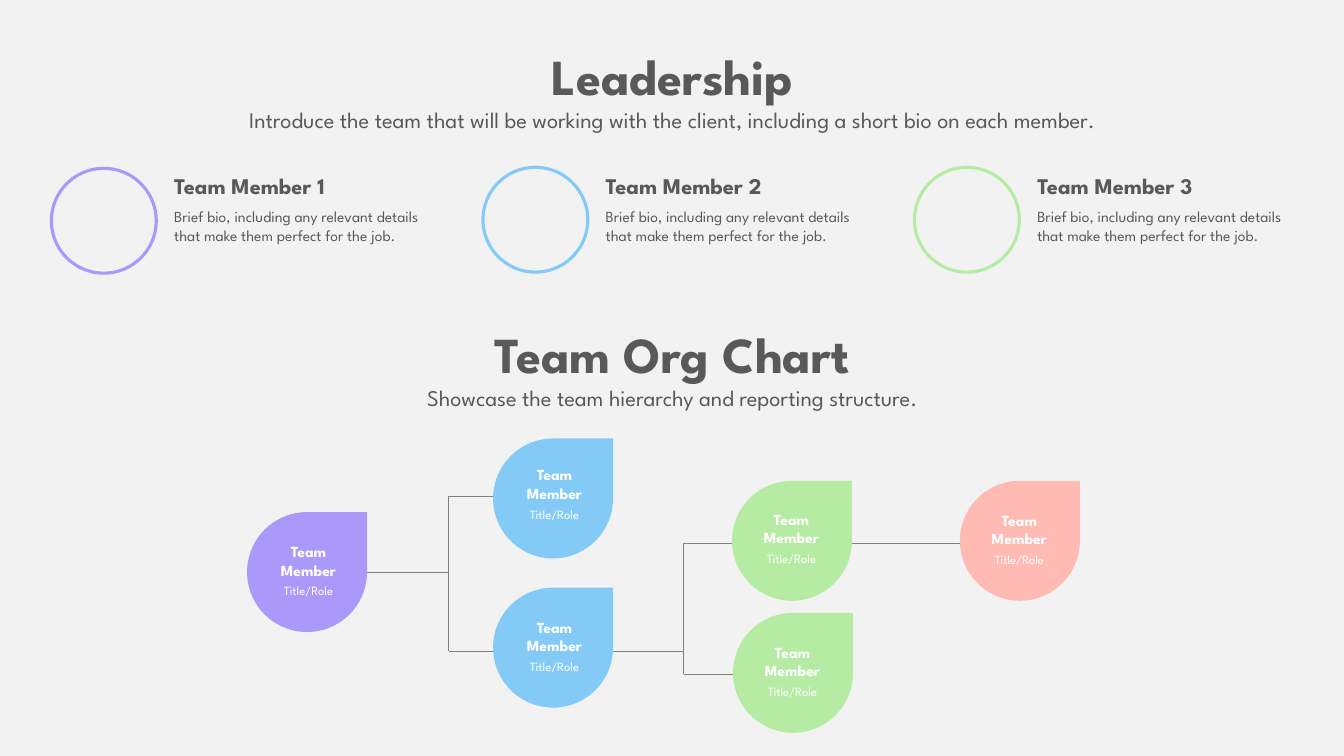
"""Build a slide with three leadership bios and a team org chart."""
import pptx
import pptx.util
import pptx.dml.color
import pptx.enum.shapes
import pptx.enum.text
import lxml.etree
from pptx.util import Inches

COLORS = {
    "background": "F2F2F2",
    "text": "595959",
    "line": "808080",
    "white": "FFFFFF",
    "purple": "AA99F9",
    "blue": "84CAF7",
    "green": "B5EBA2",
    "pink": "FEBAB3",
}
FONT = "League Spartan"
BIO = "Brief bio, including any relevant details that make them perfect for the job."
SHAPE = pptx.enum.shapes.MSO_SHAPE
ALIGN = pptx.enum.text.PP_ALIGN


def rgb(name):
    return pptx.dml.color.RGBColor.from_string(COLORS[name])


def add_text(s, box, heading, body, sizes, color="text", align=ALIGN.CENTER, gap=0):
    sp = s.shapes.add_textbox(*map(Inches, box))
    tf = sp.text_frame
    tf.word_wrap = True
    tf.auto_size = pptx.enum.text.MSO_AUTO_SIZE.SHAPE_TO_FIT_TEXT
    tf.text = f"{heading}\n{body}"
    tf.paragraphs[1].space_before = pptx.util.Pt(gap)
    for p, size, bold in zip(tf.paragraphs, sizes, (True, False)):
        p.alignment = align
        for r in p.runs:
            r.font.name = FONT
            r.font.size = pptx.util.Pt(size)
            r.font.bold = bold
            r.font.color.rgb = rgb(color)


def add_line(s, x1, y1, x2, y2):
    line = s.shapes.add_connector(
        pptx.enum.shapes.MSO_CONNECTOR.STRAIGHT, *map(Inches, (x1, y1, x2, y2)))
    line.line.color.rgb = rgb("line")
    line.line.width = pptx.util.Pt(0.5)
    spPr = line._element.spPr
    lxml.etree.SubElement(spPr, pptx.oxml.ns.qn("a:effectLst"))


def add_bracket(s, start, x, top, bottom, end):
    """Draw a feed line that splits into an upper and a lower branch."""
    feed_x, feed_y = start
    add_line(s, feed_x, feed_y, x - 0.01, feed_y)
    add_line(s, x, bottom, x, top)
    for y in (top, bottom):
        add_line(s, x, y, end, y)


def add_ring(s, left, top, color):
    sp = s.shapes.add_shape(SHAPE.OVAL, *map(Inches, (left, top, 1.04, 1.04)))
    sp.shadow.inherit = False
    sp.fill.background()
    sp.line.color.rgb = rgb(color)
    sp.line.width = pptx.util.Pt(2.25)


def add_node(s, left, top, color, dx, dy):
    sp = s.shapes.add_shape(SHAPE.TEAR, *map(Inches, (left, top, 1.19, 1.19)))
    sp.shadow.inherit = False
    sp.fill.solid()
    sp.fill.fore_color.rgb = rgb(color)
    sp.line.fill.background()
    add_text(s, (left + dx, top + dy, 0.94, 0.66), "Team Member", "Title/Role",
             (11, 9), "white", gap=3)


def main():
    prs = pptx.Presentation()
    prs.slide_width, prs.slide_height = Inches(13.33), Inches(7.5)
    s = prs.slides.add_slide(prs.slide_layouts[6])
    s.background.fill.solid()
    s.background.fill.fore_color.rgb = rgb("background")

    add_bracket(s, (3.64, 5.68), 4.45, 4.92, 6.46, 5.03)
    add_bracket(s, (5.97, 6.46), 6.78, 5.39, 6.69, 7.36)
    add_line(s, 8.39, 5.39, 9.76, 5.39)

    for top, heading, body in (
        (0.4, "Leadership", "Introduce the team that will be working with the client, "
                            "including a short bio on each member."),
        (3.16, "Team Org Chart", "Showcase the team hierarchy and reporting structure."),
    ):
        add_text(s, (1.41, top, 10.52, 1.01), heading, body, (36, 16))

    rings = (("purple", 1.67), ("blue", 1.66), ("green", 1.66))
    for i, (color, top) in enumerate(rings):
        left = 0.51 + 4.28 * i
        add_ring(s, left, top, color)
        add_text(s, (left + 1.12, 1.66, 2.63, 1.04), f"Team Member {i + 1}", BIO,
                 (16, 11), align=ALIGN.LEFT, gap=6)

    for node in (
        (2.45, 5.08, "purple", 0.14, 0.25),
        (4.89, 4.35, "blue", 0.14, 0.22),
        (4.89, 5.83, "blue", 0.14, 0.25),
        (7.26, 4.77, "green", 0.12, 0.24),
        (7.27, 6.08, "green", 0.12, 0.25),
        (9.52, 4.77, "pink", 0.12, 0.25),
    ):
        add_node(s, *node)

    prs.save("out.pptx")


if __name__ == "__main__":
    main()
